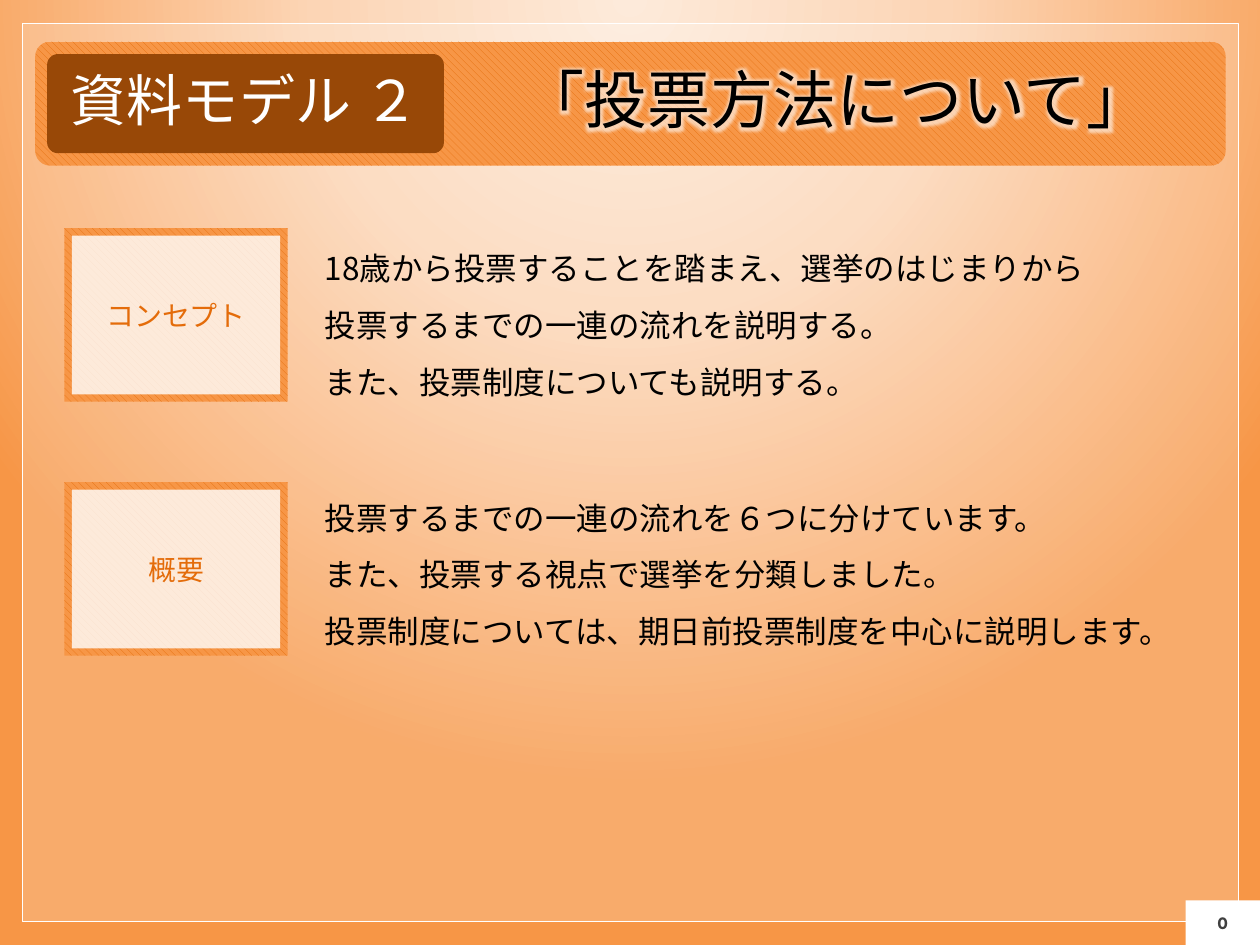
from lxml import etree
from pptx import Presentation
from pptx.dml.color import RGBColor
from pptx.enum.dml import MSO_PATTERN
from pptx.enum.shapes import MSO_SHAPE
from pptx.enum.text import MSO_ANCHOR, MSO_AUTO_SIZE, PP_ALIGN
from pptx.oxml import parse_xml
from pptx.oxml.ns import nsdecls, qn
from pptx.util import Cm, Pt

RECTANGLE = MSO_SHAPE.RECTANGLE
ROUNDED = MSO_SHAPE.ROUNDED_RECTANGLE
STRIPES = MSO_PATTERN.WIDE_DOWNWARD_DIAGONAL
MIDDLE = MSO_ANCHOR.MIDDLE
FIT_SHAPE = MSO_AUTO_SIZE.SHAPE_TO_FIT_TEXT
CENTER, LEFT = PP_ALIGN.CENTER, PP_ALIGN.LEFT

FONT = "Noto Sans CJK JP"
ORANGE, DARK_ORANGE, BROWN = "F79646", "E46C0A", "984807"
WHITE, BLACK, GREY = "FFFFFF", "000000", "404040"

presentation = Presentation()
presentation.slide_width, presentation.slide_height = Cm(25.4), Cm(19.05)
slide = presentation.slides.add_slide(presentation.slide_layouts[5])
shapes = slide.shapes


def add_box(kind, left, top, width, height, colour, opacity=100, stripe=None):
    shape = shapes.add_shape(kind, Cm(left), Cm(top), Cm(width), Cm(height))
    shape.shadow.inherit = False
    shape.line.fill.background()
    if stripe:
        shape.fill.patterned()
        shape.fill.pattern = STRIPES
        shape.fill.fore_color.rgb = RGBColor.from_string(stripe)
        shape.fill.back_color.rgb = RGBColor.from_string(colour)
    else:
        shape.fill.solid()
        shape.fill.fore_color.rgb = RGBColor.from_string(colour)
    if opacity < 100:
        colour_element = shape.fill._xPr.find(qn("a:solidFill"))[0]
        etree.SubElement(colour_element, qn("a:alpha"), val=str(opacity * 1000))
    return shape


def write_text(shape, lines, size, colour, font=FONT, align=CENTER, margins=None):
    frame = shape.text_frame
    frame.text = "\n".join(lines)
    frame.word_wrap = margins is None
    if margins:
        (frame.margin_left, frame.margin_top,
         frame.margin_right, frame.margin_bottom) = map(Cm, margins)
    if align == CENTER:
        frame.vertical_anchor = MIDDLE
    for paragraph in frame.paragraphs:
        paragraph.alignment = align
        paragraph.font.size = Pt(size)
        paragraph.font.name = font
        paragraph.font.color.rgb = RGBColor.from_string(colour)
        # East Asian typeface
        defaults = paragraph._p.pPr.find(qn("a:defRPr"))
        etree.SubElement(defaults, qn("a:ea"), typeface=font)
    return frame


# Background: glow from the top centre, with a thin inner frame
background = add_box(RECTANGLE, 0, 0, 25.4, 19.05, ORANGE)
stops = "".join(
    f'<a:gs pos="{position * 1000}"><a:srgbClr val="{colour}"/></a:gs>'
    for position, colour in [(0, "FDEADA"), (40, "FCD5B5"), (100, ORANGE)])
gradient = parse_xml(
    f'<a:gradFill {nsdecls("a")} rotWithShape="1"><a:gsLst>{stops}</a:gsLst>'
    '<a:path path="circle"><a:fillToRect l="50000" t="0" r="50000" b="100000"/>'
    '</a:path></a:gradFill>')
properties = background._element.spPr
properties.replace(properties.find(qn("a:solidFill")), gradient)

inner_frame = add_box(RECTANGLE, 0.46, 0.48, 24.5, 18.1, WHITE, opacity=20)
inner_frame.line.color.rgb = RGBColor.from_string(WHITE)
inner_frame.line.width = Pt(0.5)

# Page number
page_number = add_box(RECTANGLE, 23.9, 18.15, 1.5, 0.9, WHITE)
frame = write_text(page_number, ["0"], 10, GREY, "League Spartan",
                   margins=[0.1] * 4)
frame.paragraphs[0].font.bold = True

# Heading banner with its label
heading_margins = [0.3, 0.1, 0.3, 0.3]
banner = add_box(ROUNDED, 0.71, 0.84, 24, 2.5, ORANGE, stripe=DARK_ORANGE)
banner.adjustments[0] = 0.12
label = add_box(ROUNDED, 0.95, 1.09, 8, 2, BROWN)
label.adjustments[0] = 0.11
write_text(label, ["資料モデル ２"], 32, WHITE, margins=heading_margins)

# Title, in front of the banner, with a white outline and glow
title = shapes.title
title.left, title.top, title.width, title.height = map(Cm, (9, 1.04, 15.7, 2.1))
frame = write_text(title, ["「投票方法について」"], 36, BLACK,
                   margins=heading_margins)
run_properties = frame.paragraphs[0].runs[0]._r.get_or_add_rPr()
run_properties.append(parse_xml(
    f'<a:ln {nsdecls("a")} w="12700"><a:solidFill><a:srgbClr val="{WHITE}"/>'
    '</a:solidFill></a:ln>'))
run_properties.append(parse_xml(
    f'<a:effectLst {nsdecls("a")}><a:glow rad="101600"><a:srgbClr val="{WHITE}">'
    '<a:alpha val="60000"/></a:srgbClr></a:glow></a:effectLst>'))
shapes._spTree.append(title._element)

# Sections: framed name on the left, description on the right
sections = [
    ("コンセプト", 4.6, 4.52, [
        "18歳から投票することを踏まえ、選挙のはじまりから",
        "投票するまでの一連の流れを説明する。",
        "また、投票制度についても説明する。"]),
    ("概要", 9.72, 9.55, [
        "投票するまでの一連の流れを６つに分けています。",
        "また、投票する視点で選挙を分類しました。",
        "投票制度については、期日前投票制度を中心に説明します。"]),
]
border = 0.15
for name, top, text_top, lines in sections:
    add_box(RECTANGLE, 1.3, top, 4.5, 3.5, ORANGE, stripe=DARK_ORANGE)
    panel = add_box(RECTANGLE, 1.3 + border, top + border,
                    4.5 - 2 * border, 3.5 - 2 * border, WHITE, opacity=80)
    write_text(panel, [name], 16, DARK_ORANGE)

    description = shapes.add_textbox(Cm(6.3), Cm(text_top), Cm(18.4), Cm(3.75))
    frame = write_text(description, lines, 18, BLACK, align=LEFT)
    frame.auto_size = FIT_SHAPE
    for paragraph in frame.paragraphs:
        paragraph.line_spacing = 1.5

presentation.save("out.pptx")
